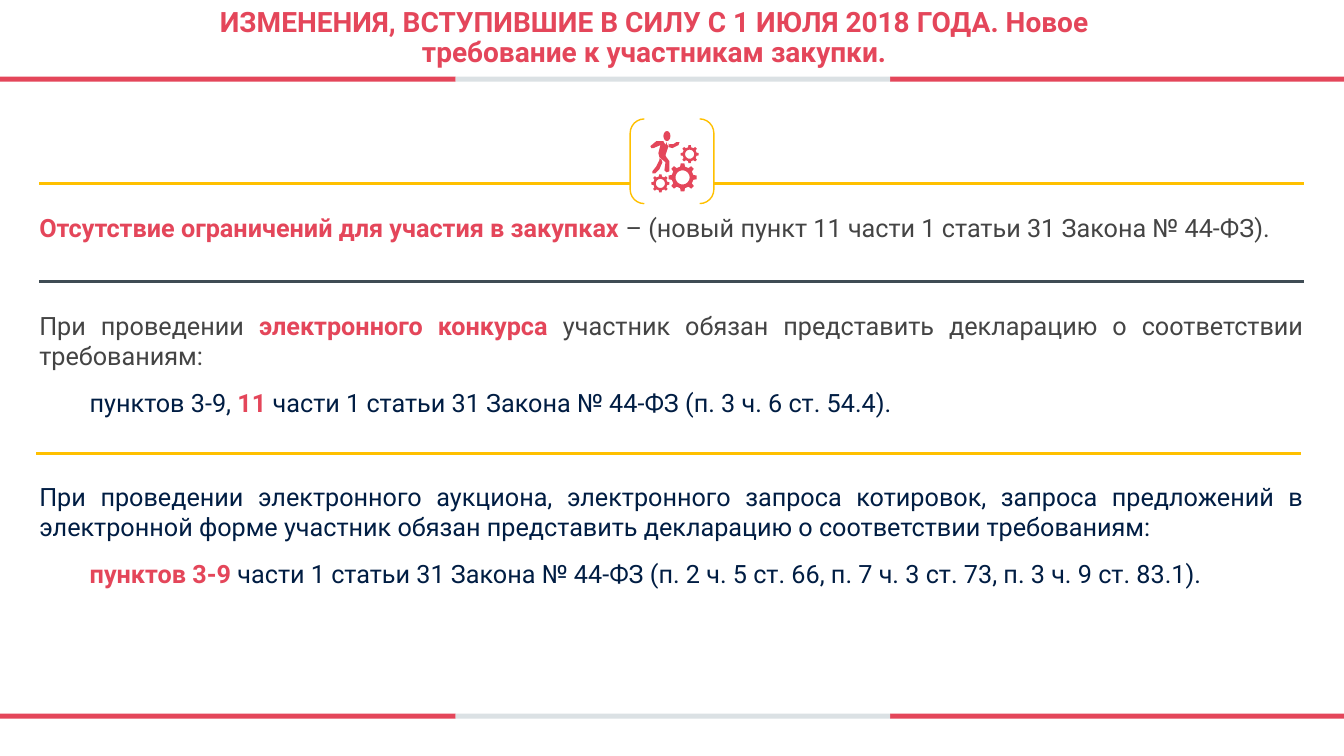
from math import cos, pi, sin

from lxml.etree import SubElement
from pptx import Presentation
from pptx.dml.color import RGBColor
from pptx.enum.shapes import MSO_CONNECTOR, MSO_SHAPE
from pptx.enum.text import MSO_ANCHOR, MSO_AUTO_SIZE, PP_ALIGN
from pptx.oxml.ns import qn
from pptx.util import Inches, Pt

COLORS = {
    "red": "E4465A", "light": "DBE1E4", "gold": "FFC000", "slate": "3F4C54",
    "grey": "444444", "navy": "001D43", "white": "FFFFFF",
}
RGB = {name: RGBColor.from_string(value) for name, value in COLORS.items()}

prs = Presentation()
prs.slide_width, prs.slide_height = Inches(13.33), Inches(7.5)
s = prs.slides.add_slide(prs.slide_layouts[5])


def paint(sp, fill):
    sp.shadow.inherit = False
    sp.fill.solid()
    sp.fill.fore_color.rgb = RGB[fill]
    sp.line.fill.background()


def add_runs(p, runs, size):
    for text, color, bold in runs:
        r = p.add_run()
        r.text = text
        for key, value in {"name": "Roboto", "size": Pt(size), "bold": bold}.items():
            setattr(r.font, key, value)
        r.font.color.rgb = RGB[color]


for y in (0.76, 7.08):
    for x, w, fill in ((0, 4.52, "red"), (8.83, 4.5, "red"), (4.52, 4.31, "light")):
        paint(s.shapes.add_shape(MSO_SHAPE.RECTANGLE, Inches(x), Inches(y), Inches(w), Inches(0.05)), fill)

title = s.shapes.title
place = {"left": 1.97, "top": 0, "width": 9.04, "height": 0.76}
for key, value in place.items():
    setattr(title, key, Inches(value))
tf = title.text_frame
for key, value in {"word_wrap": True, "auto_size": MSO_AUTO_SIZE.NONE,
                   "vertical_anchor": MSO_ANCHOR.MIDDLE}.items():
    setattr(tf, key, value)
p = tf.paragraphs[0]
p.alignment, p.line_spacing = PP_ALIGN.CENTER, 0.9
add_runs(p, [("ИЗМЕНЕНИЯ, ВСТУПИВШИЕ В СИЛУ С 1 ИЮЛЯ 2018 ГОДА. Новое требование к участникам закупки.",
              "red", True)], 20)

for x, y, color in ((0.39, 2.79, "slate"), (0.39, 1.82, "gold"), (0.36, 4.5, "gold")):
    line = s.shapes.add_connector(MSO_CONNECTOR.STRAIGHT, Inches(x), Inches(y), Inches(x + 12.54), Inches(y))
    line.line.color.rgb, line.line.width = RGB[color], Pt(2.25)
    SubElement(line._element.spPr, qn("a:effectLst"))

paint(s.shapes.add_shape(MSO_SHAPE.ROUNDED_RECTANGLE, Inches(6.25), Inches(1.19), Inches(0.83), Inches(0.82)),
      "white")
for x, rotation in ((6.25, 180), (6.94, 0)):
    bracket = s.shapes.add_shape(MSO_SHAPE.RIGHT_BRACKET, Inches(x), Inches(1.18), Inches(0.14), Inches(0.84))
    bracket.shadow.inherit = False
    bracket.rotation = rotation
    bracket.adjustments[0] = 1
    bracket.fill.background()
    bracket.line.color.rgb, bracket.line.width = RGB["gold"], Pt(1)

torso = [(6.48, 1.47), (6.55, 1.44), (6.53, 1.52), (6.54, 1.56), (6.6, 1.61), (6.59, 1.69), (6.61, 1.71),
         (6.64, 1.7), (6.64, 1.6), (6.61, 1.56), (6.6, 1.54), (6.63, 1.45), (6.63, 1.42), (6.62, 1.45),
         (6.61, 1.41), (6.6, 1.44), (6.58, 1.4), (6.51, 1.4), (6.45, 1.45), (6.46, 1.47)]
back_leg = [(6.54, 1.57), (6.54, 1.59), (6.51, 1.65), (6.47, 1.7), (6.47, 1.72), (6.5, 1.72),
            (6.54, 1.68), (6.57, 1.61), (6.56, 1.58)]
front_arm = [(6.63, 1.46), (6.67, 1.47), (6.73, 1.44), (6.74, 1.41), (6.71, 1.41), (6.68, 1.43),
             (6.64, 1.43)]
icon = [[torso], [back_leg], [front_arm]]
for cx, cy, radius, hole in ((6.77, 1.76, 0.14, 0.07), (6.84, 1.53, 0.09, 0.045), (6.55, 1.82, 0.09, 0.045)):
    rim = []
    for tooth in range(8):
        for step, reach in ((-0.28, 0.78), (-0.17, 1), (0.17, 1), (0.28, 0.78)):
            angle = (tooth + step) * pi / 4
            rim.append((cx + radius * reach * cos(angle), cy + radius * reach * sin(angle)))
    bore = [(cx + hole * cos(i * pi / 12), cy - hole * sin(i * pi / 12)) for i in range(24)]
    icon.append([rim, bore])
for outlines in icon:
    points = [[(Inches(x), Inches(y)) for x, y in outline] for outline in outlines]
    builder = s.shapes.build_freeform(*points[0][0])
    builder.add_line_segments(points[0][1:])
    for outline in points[1:]:
        builder.move_to(*outline[0])
        builder.add_line_segments(outline[1:])
    paint(builder.convert_to_shape(), "red")
paint(s.shapes.add_shape(MSO_SHAPE.OVAL, Inches(6.58), Inches(1.3), Inches(0.07), Inches(0.1)), "red")

restriction = [
    (0, 0, [("Отсутствие ограничений для участия в закупках ", "red", True),
            ("– (новый пункт 11 части 1 статьи 31 Закона № 44-ФЗ).", "grey", False)]),
]
declarations = [
    (0, 0, [("При проведении ", "grey", False), ("электронного конкурса ", "red", True),
            ("участник обязан представить декларацию о соответствии требованиям:", "grey", False)]),
    (0.5, 0, [("пунктов 3-9, ", "navy", False), ("11 ", "red", True),
              ("части 1 статьи 31 Закона № 44-ФЗ (п. 3 ч. 6 ст. 54.4).", "navy", False)]),
    (0, 33, [("При проведении электронного аукциона, электронного запроса котировок, запроса предложений "
              "в электронной форме участник обязан представить декларацию о соответствии требованиям:",
              "navy", False)]),
    (0.5, 0, [("пунктов 3-9 ", "red", True),
              ("части 1 статьи 31 Закона № 44-ФЗ (п. 2 ч. 5 ст. 66, п. 7 ч. 3 ст. 73, п. 3 ч. 9 ст. 83.1).",
               "navy", False)]),
]
for y, h, paragraphs in ((2.11, 0.68, restriction), (3.08, 3.26, declarations)):
    tf = s.shapes.add_textbox(Inches(0.39), Inches(y), Inches(12.54), Inches(h)).text_frame
    tf.word_wrap = True
    for side in ("left", "top", "right", "bottom"):
        setattr(tf, f"margin_{side}", 0)
    for i, (indent, before, runs) in enumerate(paragraphs):
        p = tf.add_paragraph() if i else tf.paragraphs[0]
        p._p.get_or_add_pPr().set("marL", str(Inches(indent)))
        for key, value in {"alignment": PP_ALIGN.JUSTIFY, "space_before": Pt(before),
                           "space_after": Pt(12)}.items():
            setattr(p, key, value)
        add_runs(p, runs, 18)

prs.save("out.pptx")
